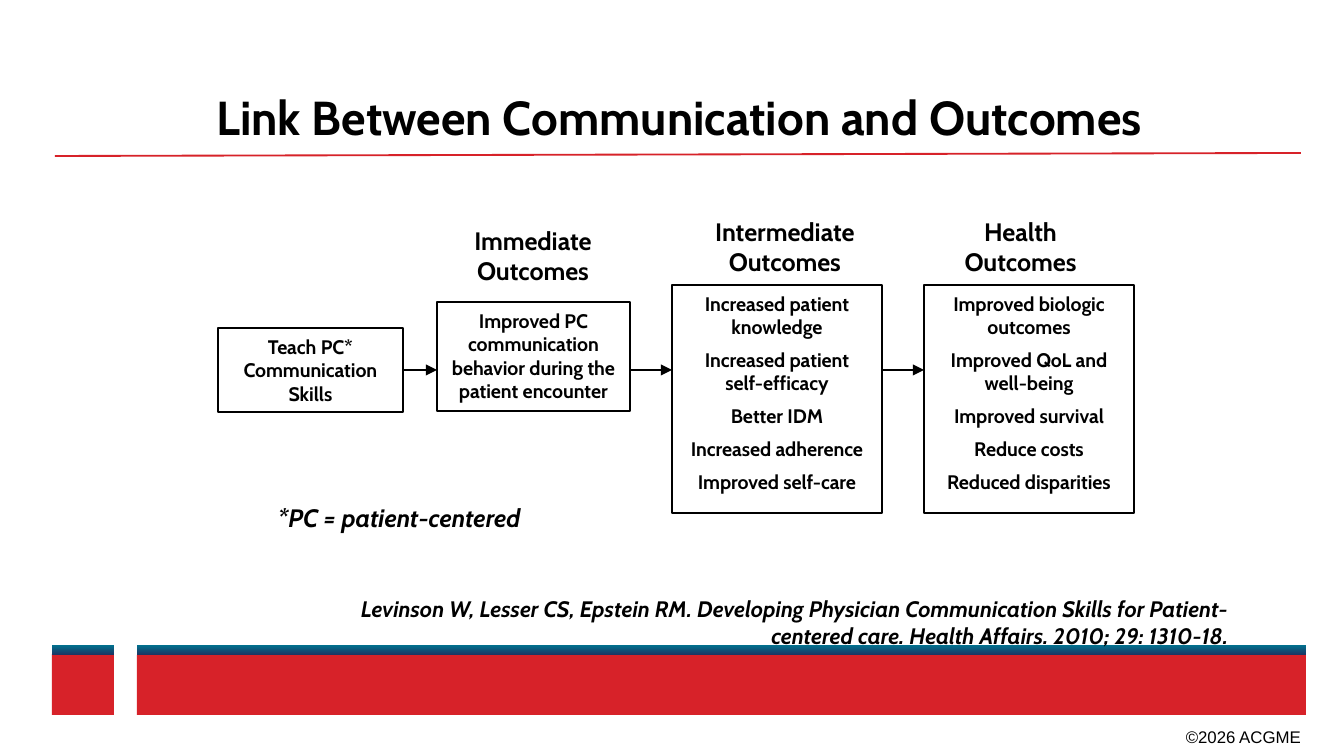
from lxml.etree import SubElement
from pptx import Presentation
from pptx.dml.color import RGBColor
from pptx.enum.shapes import MSO_CONNECTOR, MSO_SHAPE
from pptx.enum.text import MSO_ANCHOR, PP_ALIGN
from pptx.oxml.ns import qn
from pptx.util import Pt

EMU_PER_PX = 914400 / 134.4

BLACK = RGBColor(0x00, 0x00, 0x00)
RED = RGBColor(0xD7, 0x22, 0x29)
TEAL = RGBColor(0x00, 0x72, 0x8F)
NAVY = RGBColor(0x1C, 0x35, 0x63)


def px(*lengths):
    return [round(n * EMU_PER_PX) for n in lengths]


class SlideBuilder:
    font = "Cabin"

    def __init__(self, slide):
        self.s = slide

    def add_text(self, sp, paragraphs, size, align=PP_ALIGN.CENTER, bold=True,
                 italic=False, font=None, anchor=MSO_ANCHOR.TOP):
        tf = sp.text_frame
        tf.word_wrap = True
        tf.vertical_anchor = anchor
        for i, text in enumerate(paragraphs):
            p = tf.paragraphs[0] if i == 0 else tf.add_paragraph()
            p.alignment = align
            if i:
                p.space_before = Pt(5)
            r = p.add_run()
            r.text = text
            r.font.name = font or self.font
            r.font.size = Pt(size)
            r.font.bold = bold
            r.font.italic = italic
            r.font.color.rgb = BLACK

    def label(self, x, y, w, h, text, size, **style):
        sp = self.s.shapes.add_textbox(*px(x, y, w, h))
        self.add_text(sp, [text], size, **style)

    def rect(self, x, y, w, h):
        sp = self.s.shapes.add_shape(MSO_SHAPE.RECTANGLE, *px(x, y, w, h))
        sp.shadow.inherit = False
        return sp

    def bar(self, x, y, w, h, *colors):
        sp = self.rect(x, y, w, h)
        sp.line.fill.background()
        if len(colors) == 1:
            sp.fill.solid()
            sp.fill.fore_color.rgb = colors[0]
        else:
            sp.fill.gradient()
            sp.fill.gradient_angle = 270
            for stop, color in zip(sp.fill.gradient_stops, colors):
                stop.color.rgb = color

    def box(self, x, y, w, h, paragraphs):
        sp = self.rect(x, y, w, h)
        sp.fill.background()
        sp.line.color.rgb = BLACK
        sp.line.width = Pt(0.75)
        self.add_text(sp, paragraphs, 10.5)
        return sp

    def line(self, x1, y1, x2, y2, color, width, arrow=False):
        c = self.s.shapes.add_connector(MSO_CONNECTOR.STRAIGHT,
                                        *px(x1, y1, x2, y2))
        c.line.color.rgb = color
        c.line.width = Pt(width)
        sp_pr = c._element.spPr
        if arrow:
            SubElement(sp_pr.find(qn("a:ln")), qn("a:tailEnd"),
                       type="triangle")
        SubElement(sp_pr, qn("a:effectLst"))
        return c


def main():
    prs = Presentation()
    prs.slide_width, prs.slide_height = px(1344, 756)
    b = SlideBuilder(prs.slides.add_slide(prs.slide_layouts[6]))

    # Footer bars, title rule and copyright
    for x, y, w, h in [(137, 655, 1169, 60), (52, 654, 62, 61)]:
        b.bar(x, y, w, h, RED)
        b.bar(x, 645, w, 10, TEAL, NAVY)
    b.line(55, 156, 1301, 153, RED, 1)
    b.label(1171, 720, 143, 34, "©2026 ACGME", 9, align=PP_ALIGN.RIGHT,
            bold=False, font="Arial")

    # Title
    b.label(146, 65, 1067, 87, "Link Between Communication and Outcomes",
            25.5, anchor=MSO_ANCHOR.BOTTOM)

    # Column headings
    for x, y, w, heading in [(445, 219, 176, "Immediate Outcomes"),
                             (697, 210, 176, "Intermediate Outcomes"),
                             (924, 210, 193, "Health Outcomes")]:
        b.label(x, y, w, 76, heading, 13.5)

    # Outcome boxes
    boxes = [
        (218, 328, 185, 84, ["Teach PC* Communication Skills"]),
        (437, 302, 193, 109, ["Improved PC communication behavior during "
                              "the patient encounter"]),
        (672, 285, 210, 228, ["Increased patient knowledge",
                              "Increased patient self-efficacy",
                              "Better IDM",
                              "Increased adherence",
                              "Improved self-care"]),
        (924, 285, 210, 228, ["Improved biologic outcomes",
                              "Improved QoL and well-being",
                              "Improved survival",
                              "Reduce costs",
                              "Reduced disparities"]),
    ]
    shapes = [b.box(*row) for row in boxes]

    # Arrows across the gaps, level with the middle of the first box
    arrows = [b.line(left[0] + left[2], 370, right[0], 370, BLACK, 0.75,
                     arrow=True)
              for left, right in zip(boxes, boxes[1:])]
    arrows[0].begin_connect(shapes[0], 3)

    # Citation and footnote
    b.label(277, 589, 965, 67,
            "Levinson W, Lesser CS, Epstein RM. Developing Physician "
            "Communication Skills for Patient-centered care. Health Affairs. "
            "2010; 29: 1310-18.", 12, align=PP_ALIGN.RIGHT, italic=True)
    b.label(235, 496, 328, 44, "*PC = patient-centered", 13.5, italic=True)

    prs.save("out.pptx")


if __name__ == "__main__":
    main()
